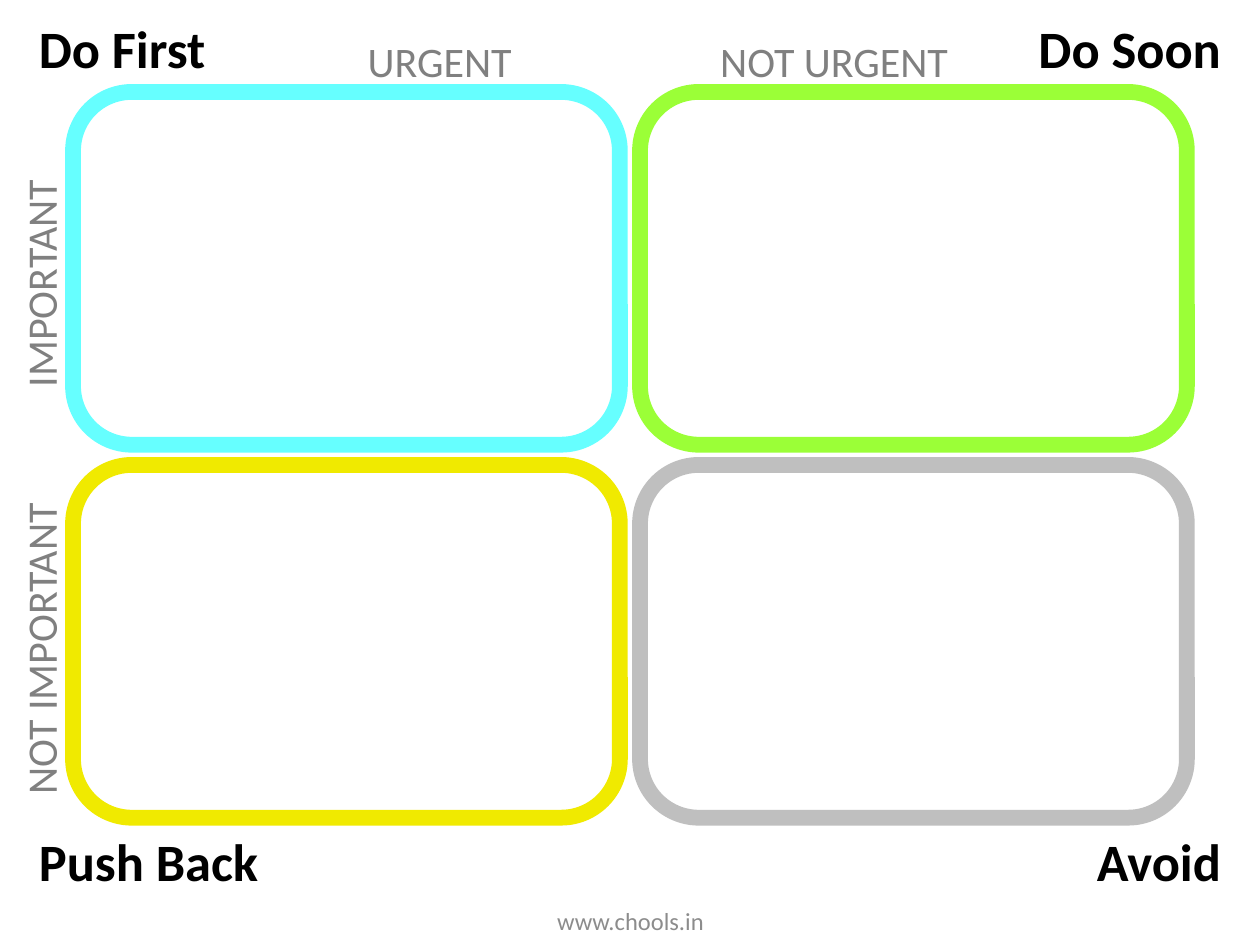
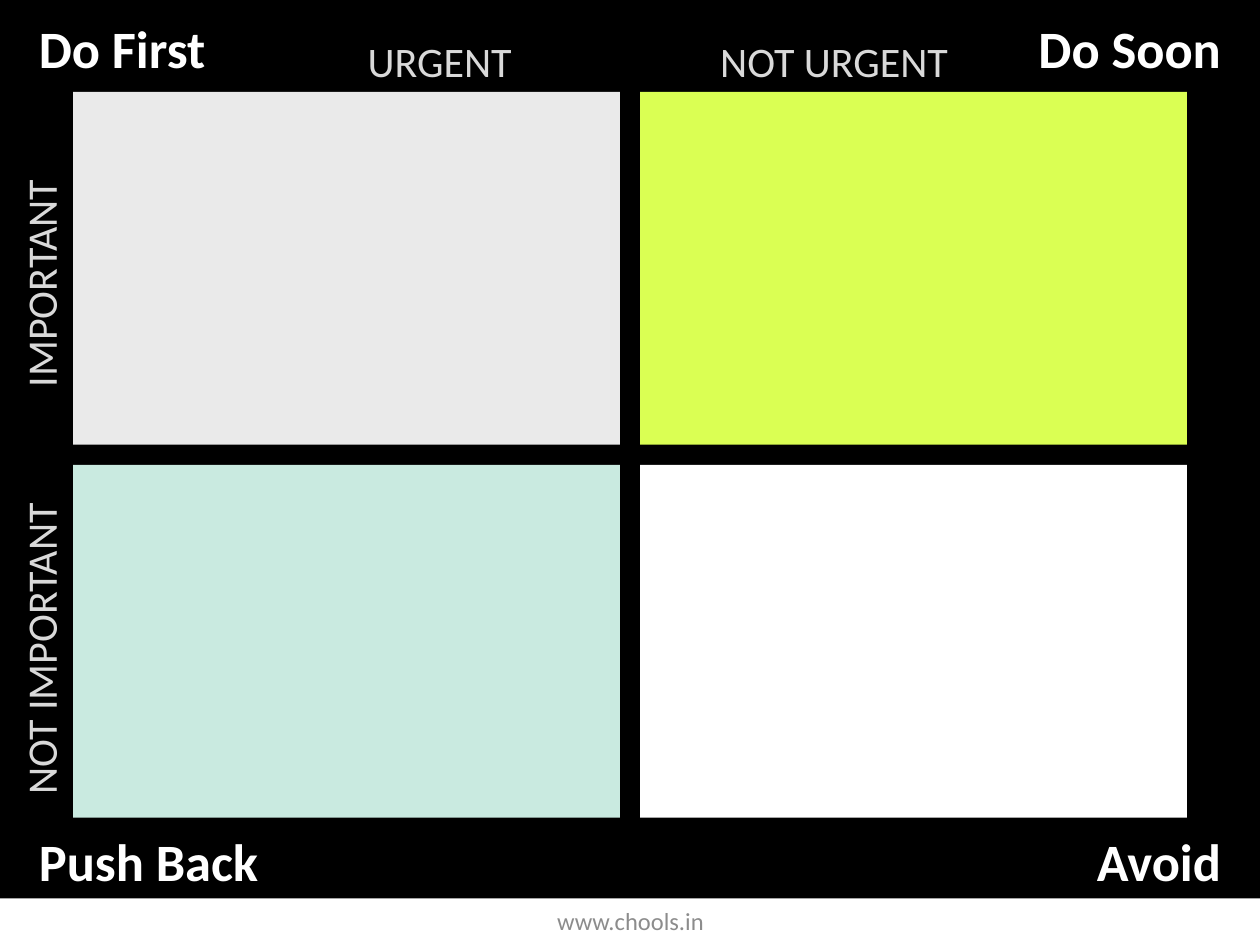
from pptx import Presentation
from pptx.dml.color import RGBColor
from pptx.enum.shapes import MSO_SHAPE
from pptx.enum.text import MSO_ANCHOR, MSO_AUTO_SIZE, PP_ALIGN
from pptx.util import Inches, Pt

RECTANGLE = MSO_SHAPE.RECTANGLE
ROUNDED = MSO_SHAPE.ROUNDED_RECTANGLE
LEFT, CENTER, RIGHT = PP_ALIGN.LEFT, PP_ALIGN.CENTER, PP_ALIGN.RIGHT
TOP, MIDDLE = MSO_ANCHOR.TOP, MSO_ANCHOR.MIDDLE
FIT_SHAPE = MSO_AUTO_SIZE.SHAPE_TO_FIT_TEXT

FONT = "Calibri"
COLORS = {
    "black": "000000",
    "white": "FFFFFF",
    "axis_on_white": "808080",
    "axis_on_black": "D9D9D9",
    "footer": "8C8C8C",
    "cyan": "66FFFF",
    "green": "9BFF37",
    "yellow": "F0EA00",
    "silver": "BFBFBF",
    "pale_gray": "EAEAEA",
    "lime": "DAFF53",
    "mint": "C9EAE0",
}

ROW_TOPS = (0.73, 3.69)
COLUMN_LEFTS = (0.58, 5.08)
QUADRANT_WIDTH, QUADRANT_HEIGHT = 4.34, 2.8
ACTIONS = (
    ("Do First", 0.21, 0.08, 1.54, LEFT),
    ("Do Soon", 8.13, 0.08, 1.66, RIGHT),
    ("Push Back", 0.21, 6.53, 1.95, LEFT),
    ("Avoid", 8.59, 6.53, 1.2, RIGHT),
)
AXES = (
    ("URGENT", 3.49, 0.48, 0),
    ("NOT URGENT", 6.62, 0.48, 0),
    ("IMPORTANT", 0.32, 2.25, 270),
    ("NOT IMPORTANT", 0.32, 5.15, 270),
)
AXIS_WIDTH, AXIS_HEIGHT = 2.6, 0.5


class MatrixDeck:
    def __init__(self):
        self.deck = Presentation()
        self.deck.slide_width = Inches(10)
        self.deck.slide_height = Inches(7.5)
        self.slide = None

    def color(self, name):
        return RGBColor.from_string(COLORS[name])

    def new_slide(self):
        self.slide = self.deck.slides.add_slide(self.deck.slide_layouts[6])

    def panel(self, kind, left, top, width, height, fill, border=None):
        panel = self.slide.shapes.add_shape(
            kind, Inches(left), Inches(top), Inches(width), Inches(height))
        panel.shadow.inherit = False
        panel.fill.solid()
        panel.fill.fore_color.rgb = self.color(fill)
        if border:
            panel.line.color.rgb = self.color(border)
            panel.line.width = Pt(9)
        else:
            panel.line.fill.background()
        return panel

    def text(self, words, left, top, width, height, size, color,
             align=CENTER, bold=False, anchor=TOP, wrap=False):
        box = self.slide.shapes.add_textbox(
            Inches(left), Inches(top), Inches(width), Inches(height))
        frame = box.text_frame
        frame.word_wrap = wrap
        frame.vertical_anchor = anchor
        if not wrap:
            frame.auto_size = FIT_SHAPE
        paragraph = frame.paragraphs[0]
        paragraph.alignment = align
        run = paragraph.add_run()
        run.text = words
        run.font.name = FONT
        run.font.size = Pt(size)
        run.font.bold = bold
        run.font.color.rgb = self.color(color)
        return box

    def quadrants(self, fills, borders, corner=None):
        corners = [(left, top) for top in ROW_TOPS for left in COLUMN_LEFTS]
        for (left, top), fill, border in zip(corners, fills, borders):
            quadrant = self.panel(ROUNDED, left, top, QUADRANT_WIDTH,
                                  QUADRANT_HEIGHT, fill, border)
            if corner is not None:
                quadrant.adjustments[0] = corner

    def labels(self, action_color, axis_color):
        for words, left, top, width, align in ACTIONS:
            self.text(words, left, top, width, 0.61, 30, action_color,
                      align, bold=True)
        for words, center_x, center_y, angle in AXES:
            axis = self.text(words, center_x - AXIS_WIDTH / 2,
                             center_y - AXIS_HEIGHT / 2,
                             AXIS_WIDTH, AXIS_HEIGHT, 24, axis_color)
            axis.rotation = angle
        self.text("www.chools.in", 3.42, 7.11, 3.17, 0.4, 14, "footer",
                  anchor=MIDDLE, wrap=True)


def main():
    matrix = MatrixDeck()

    matrix.new_slide()
    matrix.quadrants(["white"] * 4, ["cyan", "green", "yellow", "silver"])
    matrix.labels("black", "axis_on_white")

    matrix.new_slide()
    matrix.panel(RECTANGLE, 0, 0, 10, 7.13, "black")
    matrix.quadrants(["pale_gray", "lime", "mint", "white"], [None] * 4, corner=0)
    matrix.labels("white", "axis_on_black")

    matrix.deck.save("out.pptx")


if __name__ == "__main__":
    main()
